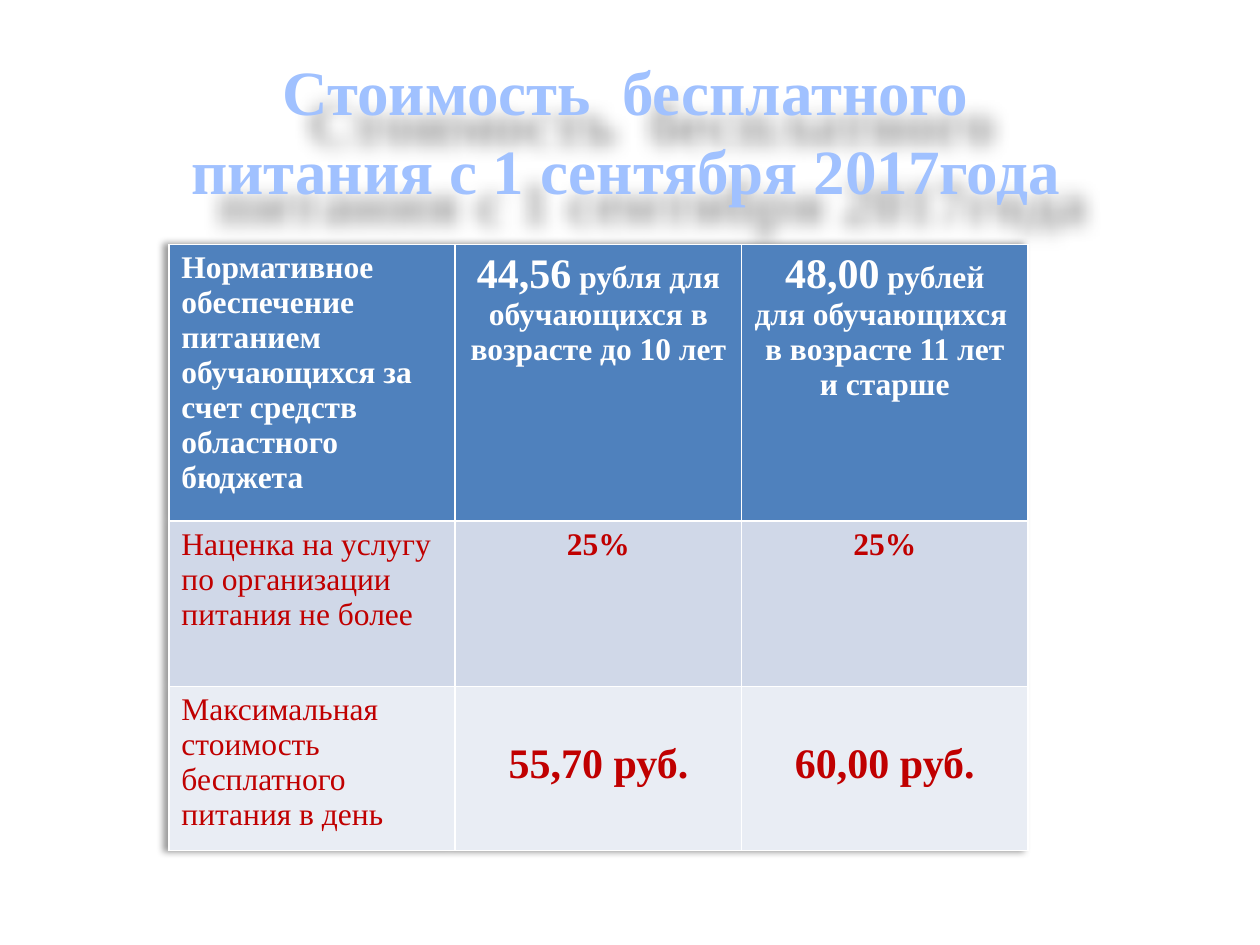
import lxml.etree
import pptx
import pptx.dml.color
import pptx.enum.text
import pptx.oxml
import pptx.oxml.ns
import pptx.util

Pt = pptx.util.Pt
RGB = pptx.dml.color.RGBColor
ALIGN = pptx.enum.text.PP_ALIGN
ANCHOR = pptx.enum.text.MSO_ANCHOR

FONT = "Times New Roman"
TITLE_BLUE = RGB(0xA0, 0xC1, 0xFF)
WHITE = RGB(0xFF, 0xFF, 0xFF)
RED = RGB(0xC0, 0x00, 0x00)
HEAD_FILL = RGB(0x4F, 0x81, 0xBD)
ROW_FILLS = [HEAD_FILL, RGB(0xD0, 0xD8, 0xE8), RGB(0xE9, 0xED, 0xF4)]
ROW_HEIGHTS = [158, 94.5, 94]

TITLE = ["Стоимость  бесплатного", "питания с 1 сентября 2017года"]
ROWS = [
    [
        [[("Нормативное обеспечение питанием обучающихся за счет средств "
           "областного бюджета", 18)]],
        [[("44,56", 24), (" рубля для обучающихся в возрасте до 10 лет", 18)]],
        [[("48,00", 24), (" рублей", 18)],
         [("для обучающихся ", 18)],
         [("в возрасте 11 лет и старше", 18)]],
    ],
    [
        [[("Наценка на услугу по организации питания не более", 18)]],
        [[("25%", 18)]],
        [[("25%", 18)]],
    ],
    [
        [[("Максимальная стоимость бесплатного питания в день", 18)]],
        [[("55,70 руб.", 24)]],
        [[("60,00 руб.", 24)]],
    ],
]


def set_attrs(obj, values):
    """Set each attribute of obj from a dict of format values."""
    for name, value in values.items():
        setattr(obj, name, value)


def add_shadow(parent, blur, dist, angle, alpha):
    """Append an outer shadow; blur and dist are points, angle is degrees, alpha percent."""
    parent.append(pptx.oxml.parse_xml(
        f'<a:effectLst {pptx.oxml.ns.nsdecls("a")}>'
        f'<a:outerShdw blurRad="{Pt(blur)}" dist="{Pt(dist)}" dir="{angle * 60000}" '
        f'algn="tl" rotWithShape="0"><a:srgbClr val="000000">'
        f'<a:alpha val="{alpha * 1000}"/></a:srgbClr></a:outerShdw></a:effectLst>'))


def write_paragraphs(tf, paragraphs, align, color, bold):
    """Fill a text frame with paragraphs, each a list of (text, size) runs."""
    for i, runs in enumerate(paragraphs):
        p = tf.add_paragraph() if i else tf.paragraphs[0]
        p.alignment = align
        for text, size in runs:
            r = p.add_run()
            r.text = text
            set_attrs(r.font, {"name": FONT, "size": Pt(size), "bold": bold})
            r.font.color.rgb = color


def add_title(s, left, top, width, height):
    """Place the shadowed two-line title in the given box."""
    sp = s.shapes.title
    set_attrs(sp, {"left": Pt(left), "top": Pt(top),
                   "width": Pt(width), "height": Pt(height)})
    tf = sp.text_frame
    set_attrs(tf, {"word_wrap": False, "vertical_anchor": ANCHOR.MIDDLE,
                   "auto_size": pptx.enum.text.MSO_AUTO_SIZE.NONE})
    write_paragraphs(tf, [[(line, 36)] for line in TITLE],
                     ALIGN.CENTER, TITLE_BLUE, True)
    for p in tf.paragraphs:
        p.line_spacing = 1.05
    add_shadow(sp._element.spPr, 10, 22, 50, 40)


def add_price_table(s, left, top, width):
    """Place the price table with its upper left corner and width as given."""
    count = len(ROWS[0])
    frame = s.shapes.add_table(len(ROWS), count, Pt(left), Pt(top),
                               Pt(width), Pt(sum(ROW_HEIGHTS)))
    table = frame.table
    add_shadow(table._tbl.tblPr, 4, 3, 180, 40)
    table._tbl.tblPr.insert(0, table._tbl.tblPr[-1])
    for col in table.columns:
        col.width = Pt(width / count)
    for i, (row, fill, height) in enumerate(zip(ROWS, ROW_FILLS, ROW_HEIGHTS)):
        table.rows[i].height = Pt(height)
        for j, paragraphs in enumerate(row):
            cell = table.cell(i, j)
            cell.fill.solid()
            cell.fill.fore_color.rgb = fill
            if i == 2 and j:
                cell.margin_top = Pt(31.2)
            write_paragraphs(cell.text_frame, paragraphs,
                             ALIGN.CENTER if j else ALIGN.LEFT,
                             RED if i else WHITE, i == 0 or j > 0)


def main():
    """Build the slide and save it."""
    prs = pptx.Presentation()
    set_attrs(prs, {"slide_width": Pt(720), "slide_height": Pt(540)})
    s = prs.slides.add_slide(prs.slide_layouts[5])
    add_title(s, 95, 26, 525, 94)
    add_price_table(s, 96.5, 139.7, 491)
    prs.save("out.pptx")


if __name__ == "__main__":
    main()
